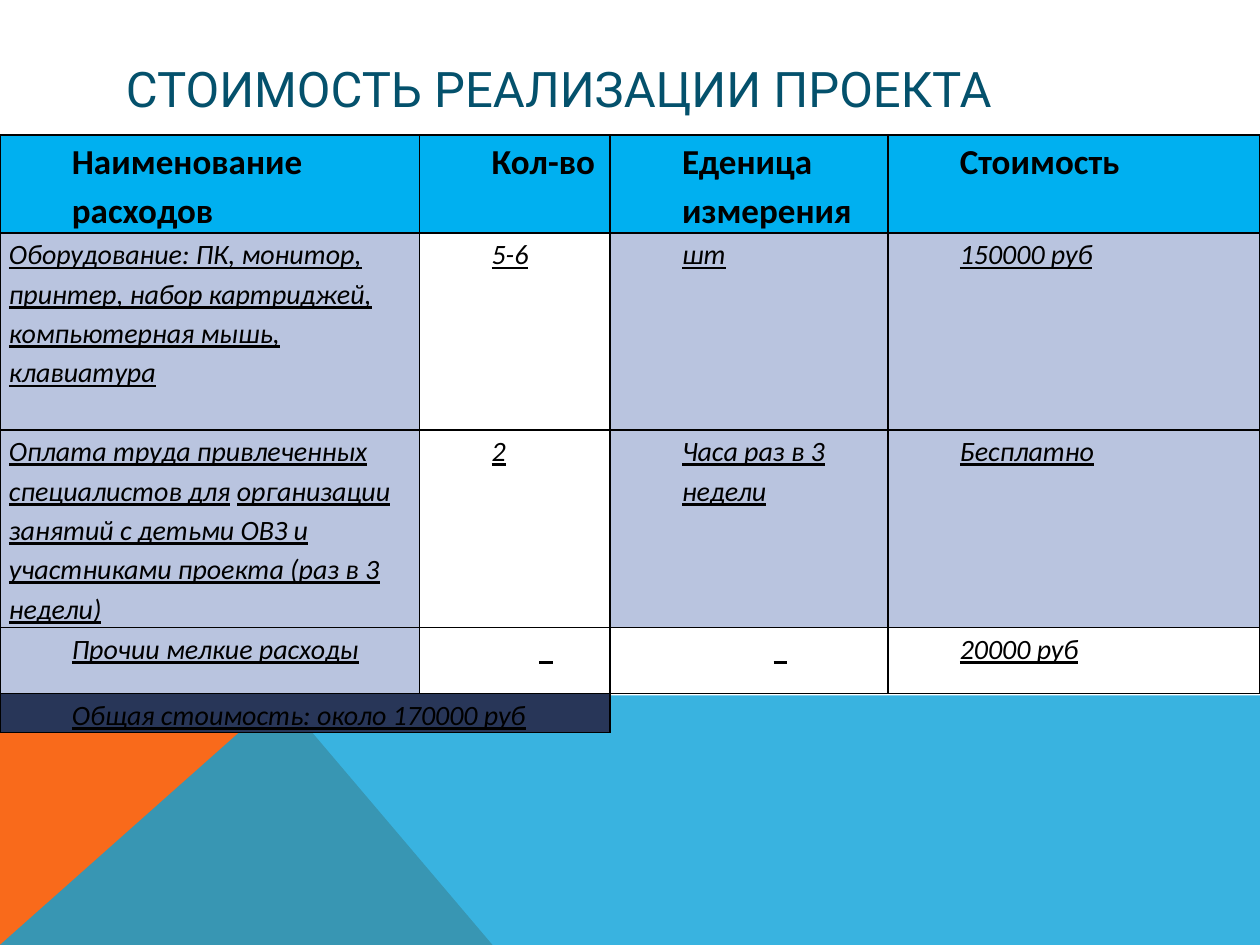
from lxml import etree
from pptx import Presentation
from pptx.dml.color import RGBColor
from pptx.enum.text import MSO_ANCHOR, PP_ALIGN
from pptx.oxml.ns import qn
from pptx.util import Cm, Pt

MIDDLE = MSO_ANCHOR.MIDDLE
LEFT, CENTER = PP_ALIGN.LEFT, PP_ALIGN.CENTER

BLACK = RGBColor(0x00, 0x00, 0x00)
ORANGE = RGBColor(0xF9, 0x6A, 0x1B)
SKY = RGBColor(0x08, 0xA1, 0xD9)
TITLE_BLUE = RGBColor(0x04, 0x51, 0x6C)
HEADER_BLUE = RGBColor(0x00, 0xB0, 0xF0)
PALE_BLUE = RGBColor(0xB9, 0xC4, 0xDF)
NAVY = RGBColor(0x28, 0x36, 0x58)

WIDTH, HEIGHT = 25.4, 19.05
HORIZON = 14.02
COLUMN_WIDTHS = [8.46, 3.84, 5.6, 7.5]
ROW_HEIGHTS = [1.98, 3.97, 3.98, 1.33, 0.79]

TITLE_FORMAT = {"name": "Roboto", "size": Pt(28)}
HEADER_FORMAT = {"name": "Calibri", "size": Pt(20), "bold": True}
PLAIN_FORMAT = {"name": "Calibri", "size": Pt(16), "bold": False}
BODY_FORMAT = {**PLAIN_FORMAT, "italic": True, "underline": True}
CELL_MARGINS = {"margin_left": Cm(0.18), "margin_right": Cm(0.18),
                "margin_top": 0, "margin_bottom": 0}

ROWS = [
    ["Наименование расходов", "Кол-во", "Еденица измерения", "Стоимость"],
    ["Оборудование: ПК, монитор, принтер, набор картриджей, "
     "компьютерная мышь, клавиатура", "5-6", "шт", "150000 руб"],
    [("Оплата труда привлеченных специалистов для", " ",
      "организации занятий с детьми ОВЗ и участниками проекта (раз в 3 недели)"),
     "2", "Часа раз в 3 недели", "Бесплатно"],
    ["Прочии мелкие расходы", "_", "_", "20000 руб"],
    ["Общая стоимость: около 170000 руб", "", "", ""],
]
FILLS = [
    [HEADER_BLUE] * 4,
    [PALE_BLUE, None, PALE_BLUE, PALE_BLUE],
    [PALE_BLUE, None, PALE_BLUE, PALE_BLUE],
    [PALE_BLUE, None, None, None],
    [NAVY, NAVY, None, None],
]
ALL_SIDES = "LRTB"
TOTAL_ROW_SIDES = [ALL_SIDES, ALL_SIDES, "LT", "T"]


def apply_format(target, values):
    for name, value in values.items():
        setattr(target, name, value)


def add_run(paragraph, text, values, color):
    run = paragraph.add_run()
    run.text = text
    apply_format(run.font, values)
    run.font.color.rgb = color


def add_polygon(slide, points, color, opacity=100):
    corners = [(Cm(x), Cm(y)) for x, y in points]
    builder = slide.shapes.build_freeform(*corners[0])
    builder.add_line_segments(corners[1:], close=True)
    shape = builder.convert_to_shape()
    shape.shadow.inherit = False
    shape.line.fill.background()
    shape.fill.solid()
    shape.fill.fore_color.rgb = color
    if opacity < 100:
        color_element = shape._element.spPr.find(qn("a:solidFill"))[0]
        etree.SubElement(color_element, qn("a:alpha"), val=str(opacity * 1000))


def add_title(slide, text):
    box = slide.shapes.add_textbox(Cm(2.29), Cm(1.02), Cm(20.88), Cm(1.52))
    apply_format(box.text_frame, {"word_wrap": True, "vertical_anchor": MIDDLE})
    add_run(box.text_frame.paragraphs[0], text, TITLE_FORMAT, TITLE_BLUE)


def set_borders(cell, sides):
    properties = cell._tc.get_or_add_tcPr()
    for side in ALL_SIDES:
        line = etree.SubElement(properties, qn(f"a:ln{side}"), w=str(Pt(1)))
        if side in sides:
            fill = etree.SubElement(line, qn("a:solidFill"))
            etree.SubElement(fill, qn("a:srgbClr"), val=str(BLACK))
        else:
            etree.SubElement(line, qn("a:noFill"))


def set_fill(cell, color):
    if color is None:
        cell.fill.background()
    else:
        cell.fill.solid()
        cell.fill.fore_color.rgb = color


def write_cell(cell, content, values, indented):
    apply_format(cell, CELL_MARGINS)
    paragraph = cell.text_frame.paragraphs[0]
    alignment = CENTER if content == "_" else LEFT
    apply_format(paragraph, {"line_spacing": 1.15, "alignment": alignment})
    if indented:
        paragraph._p.get_or_add_pPr().set("marL", str(Cm(1.27)))
    parts = [content] if isinstance(content, str) else content
    for part in filter(None, parts):
        add_run(paragraph, part, PLAIN_FORMAT if part == " " else values, BLACK)


def add_cost_table(slide):
    frame = slide.shapes.add_table(
        len(ROWS), len(COLUMN_WIDTHS), 0, Cm(2.72),
        Cm(sum(COLUMN_WIDTHS)), Cm(sum(ROW_HEIGHTS)))
    table = frame.table
    apply_format(table, {"first_row": False, "horz_banding": False})
    for column, width in zip(table.columns, COLUMN_WIDTHS):
        column.width = Cm(width)
    for row, height in zip(table.rows, ROW_HEIGHTS):
        row.height = Cm(height)
    last = len(ROWS) - 1
    for i, contents in enumerate(ROWS):
        values = HEADER_FORMAT if i == 0 else BODY_FORMAT
        for j, content in enumerate(contents):
            cell = table.cell(i, j)
            set_borders(cell, TOTAL_ROW_SIDES[j] if i == last else ALL_SIDES)
            set_fill(cell, FILLS[i][j])
            write_cell(cell, content, values, indented=j > 0 or i not in (1, 2))
    for j in (0, 2):
        table.cell(last, j).merge(table.cell(last, j + 1))


def main():
    presentation = Presentation()
    presentation.slide_width = Cm(WIDTH)
    presentation.slide_height = Cm(HEIGHT)
    slide = presentation.slides.add_slide(presentation.slide_layouts[6])
    peak = (5.66, HORIZON)
    add_polygon(slide, [(0, HEIGHT), (0, HORIZON), peak, (9.93, HEIGHT)], ORANGE)
    add_polygon(slide, [(0, HEIGHT), peak, (WIDTH, HORIZON), (WIDTH, HEIGHT)],
                SKY, opacity=80)
    add_title(slide, "СТОИМОСТЬ РЕАЛИЗАЦИИ ПРОЕКТА")
    add_cost_table(slide)
    presentation.save("out.pptx")


if __name__ == "__main__":
    main()
